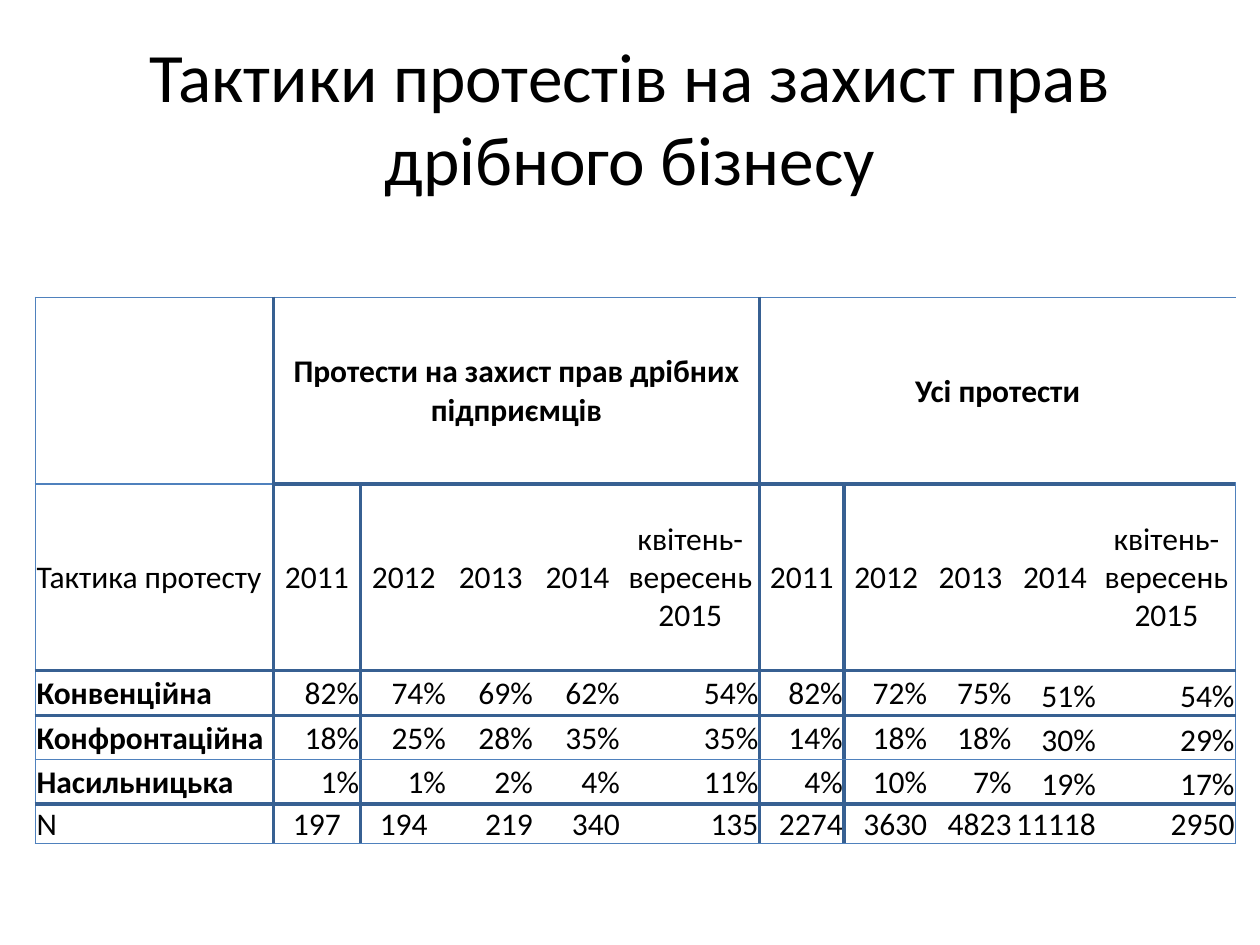
from lxml.etree import SubElement
from pptx import Presentation
from pptx.dml.color import RGBColor
from pptx.enum.text import MSO_ANCHOR, PP_ALIGN
from pptx.oxml.ns import qn
from pptx.util import Inches, Pt

COLORS = {"text": "000000", "fill": "FFFFFF", "thin": "4F81BD", "thick": "376092"}
WIDTHS = {"thin": 1, "thick": 2.25}
FONT = "Calibri"


def set_font(p, size, bold=False):
    p.font.name, p.font.size, p.font.bold = FONT, Pt(size), bold
    p.font.color.rgb = RGBColor.from_string(COLORS["text"])


def set_border(cell, side, kind):
    ln = SubElement(cell._tc.get_or_add_tcPr(), qn(f"a:ln{side}"))
    if kind is None:
        SubElement(ln, qn("a:noFill"))
        return
    ln.set("w", str(Pt(WIDTHS[kind])))
    fill = SubElement(ln, qn("a:solidFill"))
    SubElement(fill, qn("a:srgbClr"), val=COLORS[kind])


prs = Presentation()
prs.slide_width, prs.slide_height = Inches(10), Inches(7.5)
s = prs.slides.add_slide(prs.slide_layouts[5])

# Title
title = s.shapes.title
title.left, title.top = Inches(0.5), Inches(0.3)
title.width, title.height = Inches(9), Inches(1.25)
tf = title.text_frame
tf.text = "Тактики протестів на захист прав дрібного бізнесу"
tf.vertical_anchor = MSO_ANCHOR.MIDDLE
tf.paragraphs[0].alignment = PP_ALIGN.CENTER
set_font(tf.paragraphs[0], 39.6)

# Table contents: a label column, then two groups of five periods
PERIODS = ["2011", "2012", "2013", "2014", "квітень-вересень 2015"]
rows = [
    ["", "Протести на захист прав дрібних підприємців", "", "", "", "",
     "Усі протести", "", "", "", ""],
    ["Тактика протесту"] + PERIODS * 2,
    ["Конвенційна", "82%", "74%", "69%", "62%", "54%",
     "82%", "72%", "75%", "51%", "54%"],
    ["Конфронтаційна", "18%", "25%", "28%", "35%", "35%",
     "14%", "18%", "18%", "30%", "29%"],
    ["Насильницька", "1%", "1%", "2%", "4%", "11%",
     "4%", "10%", "7%", "19%", "17%"],
    ["N", "197", "194", "219", "340", "135",
     "2274", "3630", "4823", "11118", "2950"],
]
col_widths = [1.89] + [0.69] * 4 + [1.1] + [0.67] * 4 + [1.1]
row_heights = [1.48, 1.48, 0.36, 0.35, 0.35, 0.31]

# Rules by grid line, counted from the left and from the top
v_lines = {0: "thin", 1: "thick", 2: "thick", 6: "thick", 7: "thick", 11: "thin"}
h_lines = ["thin", "thick", "thick", "thick", "thin", "thick", "thin"]

table = s.shapes.add_table(len(rows), len(col_widths), Inches(0.28), Inches(2.36),
                           Inches(sum(col_widths)), Inches(sum(row_heights))).table
table.first_row = table.horz_banding = False
for column, width in zip(table.columns, col_widths):
    column.width = Inches(width)
for row, height in zip(table.rows, row_heights):
    row.height = Inches(height)

for i, row in enumerate(rows):
    for j, text in enumerate(row):
        cell = table.cell(i, j)
        # Borders: group headings have no inner rules, the label column has a thin first one
        for side, line in (("L", j), ("R", j + 1)):
            inner = i == 0 and line in (2, 7)
            set_border(cell, side, None if inner else v_lines.get(line))
        for side, line in (("T", i), ("B", i + 1)):
            set_border(cell, side, "thin" if j == 0 and line == 1 else h_lines[line])
        cell.fill.solid()
        cell.fill.fore_color.rgb = RGBColor.from_string(COLORS["fill"])

        # Text
        cell.margin_left = cell.margin_right = cell.margin_top = Inches(0.01)
        cell.margin_bottom = 0
        low = i >= 2 and j >= 9 or i == 5 and 3 <= j <= 5
        cell.vertical_anchor = MSO_ANCHOR.BOTTOM if low else MSO_ANCHOR.MIDDLE
        cell.text = text
        p = cell.text_frame.paragraphs[0]
        if j == 0:
            p.alignment = PP_ALIGN.LEFT
        elif i < 2 or i == 5 and j <= 2:
            p.alignment = PP_ALIGN.CENTER
        else:
            p.alignment = PP_ALIGN.RIGHT
        set_font(p, 18, bold=i == 0 or j == 0 and 2 <= i <= 4)

# Group headings span their five periods
for first in (1, 6):
    table.cell(0, first).merge(table.cell(0, first + 4))

prs.save("out.pptx")
